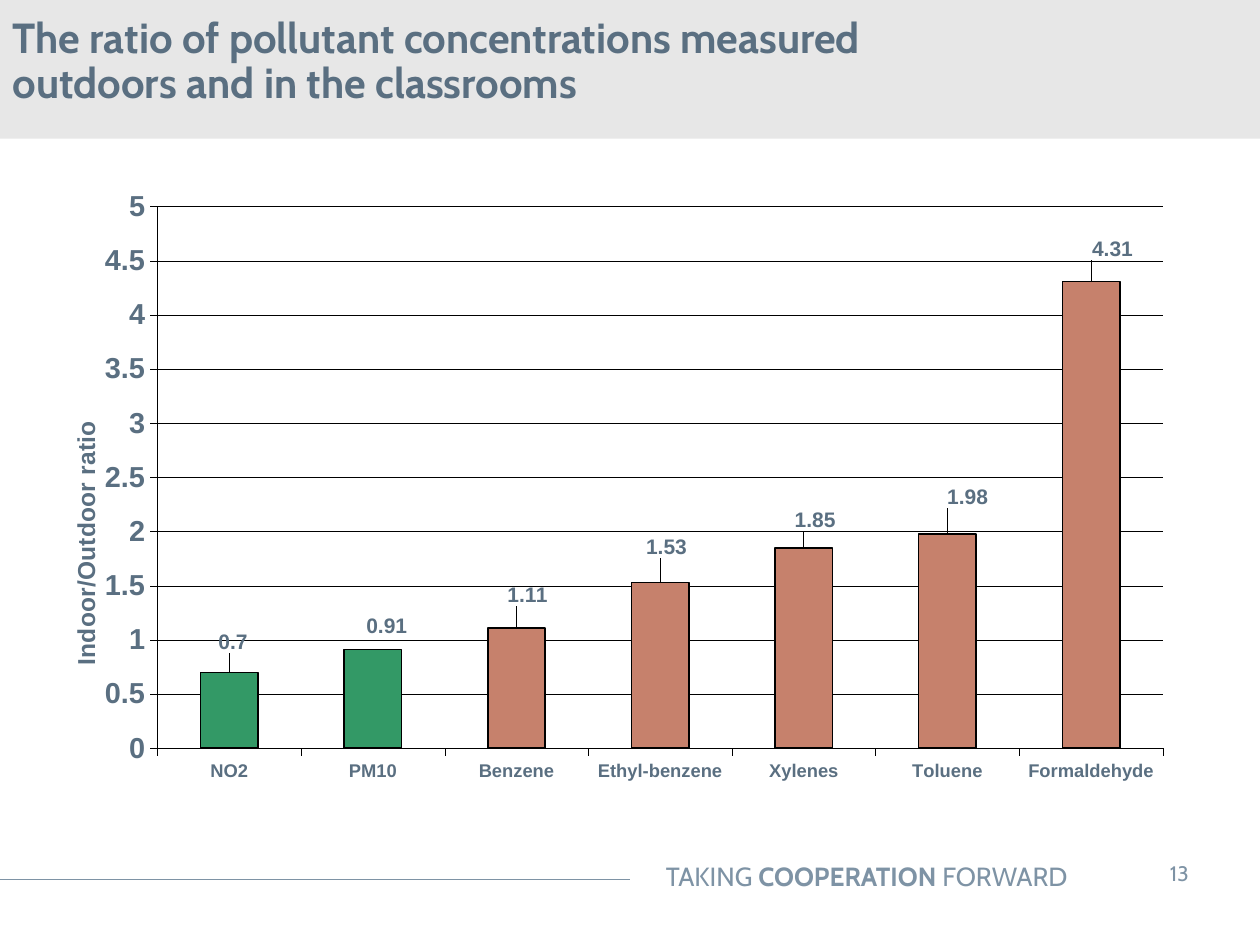
from lxml import etree
from pptx import Presentation
from pptx.chart.data import CategoryChartData
from pptx.dml.color import RGBColor
from pptx.enum import chart as ch, shapes, text
from pptx.oxml import ns
from pptx.util import Inches, Pt

HEX = {"ink": "5A6F81", "soft": "7E93A5", "band": "E7E7E7",
       "line": "000000", "clay": "C6816C", "green": "339966"}

# pollutant, ratio, shift of its label in inches (right, down)
DATA = [("NO2", 0.7, 0.03, -0.11), ("PM10", 0.91, 0.11, -0.06),
        ("Benzene", 1.11, 0.09, -0.13), ("Ethyl-benzene", 1.53, 0.05, -0.15),
        ("Xylenes", 1.85, 0.09, -0.09), ("Toluene", 1.98, 0.16, -0.16),
        ("Formaldehyde", 4.31, 0.17, -0.13)]
GREENS = 2


def rgb(name):
    return RGBColor.from_string(HEX[name])


def style(font, size, color, face, bold=None):
    font.size, font.name, font.bold = Pt(size), face, bold
    font.color.rgb = rgb(color)


def stroke(line, width, color="line"):
    line.width = Pt(width)
    line.color.rgb = rgb(color)


def layout(**vals):
    """Make a manual chart layout; text values are modes, numbers are fractions."""
    top = etree.Element(ns.qn("c:layout"))
    man = etree.SubElement(top, ns.qn("c:manualLayout"))
    for key, val in vals.items():
        etree.SubElement(man, ns.qn("c:" + key)).set("val", str(val))
    return top


def add_head(slide, x, y, w, h):
    band = slide.shapes.add_shape(shapes.MSO_SHAPE.RECTANGLE, x, y, w, h)
    band.shadow.inherit = False
    band.fill.solid()
    band.fill.fore_color.rgb = rgb("band")
    band.line.fill.background()

    title = slide.shapes.title
    title.left, title.top, title.width, title.height = x, y, Inches(7.6), Inches(0.99)
    tree = title.element.getparent()
    tree.append(title.element)  # bring the title in front of the band
    frame = title.text_frame
    frame.word_wrap = True
    frame.auto_size = text.MSO_AUTO_SIZE.NONE
    frame.vertical_anchor = text.MSO_ANCHOR.MIDDLE
    frame.margin_left = frame.margin_right = Inches(0.1)
    frame.margin_top = frame.margin_bottom = Inches(0.1)
    frame.text = ("The ratio of pollutant concentrations measured "
                  "outdoors and in the classrooms")
    para = frame.paragraphs[0]
    para.alignment = text.PP_ALIGN.LEFT
    para.line_spacing = 0.9
    style(para.font, 24, "ink", "Cabin", True)


def add_foot(slide, x, y, w):
    rule = slide.shapes.add_connector(shapes.MSO_CONNECTOR.STRAIGHT, x,
                                      y + Inches(0.25), x + w // 2, y + Inches(0.25))
    stroke(rule.line, 0.75, "soft")
    etree.SubElement(rule.element.spPr, ns.qn("a:effectLst"))

    box = slide.shapes.add_textbox(x + Inches(3.88), y + Inches(0.05),
                                   Inches(4.69), Inches(0.35))
    box.text_frame.word_wrap = True
    para = box.text_frame.paragraphs[0]
    para.alignment = text.PP_ALIGN.RIGHT
    style(para.font, 15, "soft", "Cabin")
    for part, bold in (("TAKING ", False), ("COOPERATION", True), (" FORWARD", False)):
        run = para.add_run()
        run.text, run.font.bold = part, bold

    page = slide.shapes.add_textbox(x + Inches(8.99), y, Inches(0.74), Inches(0.4))
    frame = page.text_frame
    frame.word_wrap = True
    frame.margin_left = frame.margin_right = Inches(0.2)
    frame.margin_top = frame.margin_bottom = Inches(0.1)
    frame.text = "13"
    para = frame.paragraphs[0]
    para.alignment = text.PP_ALIGN.CENTER
    style(para.font, 12, "soft", "Cabin")


def set_axes(chart, w, h):
    cat, val = chart.category_axis, chart.value_axis
    for axis, size in ((cat, 10.5), (val, 16.5)):
        axis.major_tick_mark = ch.XL_TICK_MARK.OUTSIDE
        axis.minor_tick_mark = ch.XL_TICK_MARK.NONE
        stroke(axis.format.line, 0.23)
        style(axis.tick_labels.font, size, "ink", "Arial", True)
    cat.tick_label_position = ch.XL_TICK_LABEL_POSITION.LOW
    val.minimum_scale, val.maximum_scale, val.major_unit = 0, 5, 0.5
    val.tick_labels.number_format = "General"
    val.tick_labels.number_format_is_linked = False
    stroke(val.major_gridlines.format.line, 0.23)

    name = val.axis_title
    name.text_frame.text = "Indoor/Outdoor ratio"
    style(name.text_frame.paragraphs[0].font, 14, "ink", "Arial", True)
    node = name._element
    for old in node.findall(ns.qn("c:layout")):
        node.remove(old)
    node.find(ns.qn("c:tx")).addnext(layout(
        xMode="edge", yMode="edge", x=Inches(0.21) / w, y=Inches(1.88) / h))


def set_bars(plot, w, h):
    plot.gap_width = 150
    plot.vary_by_categories = False
    bars = plot.series[0]
    bars.invert_if_negative = False
    bars.format.fill.solid()
    bars.format.fill.fore_color.rgb = rgb("clay")
    stroke(bars.format.line, 0.92)
    for i, (_, _, dx, dy) in enumerate(DATA):
        point = bars.points[i]
        if i < GREENS:
            point.format.fill.solid()
            point.format.fill.fore_color.rgb = rgb("green")
            stroke(point.format.line, 0.92)
        label = point.data_label
        style(label.font, 12, "ink", "Arial", True)
        label.position = ch.XL_LABEL_POSITION.OUTSIDE_END
        node = label._get_or_add_dLbl()
        node.find(ns.qn("c:idx")).addnext(layout(x=Inches(dx) / w, y=Inches(dy) / h))
    hide_leaders(bars.data_labels._element)


def hide_leaders(labels):
    """Turn off the lines that join moved labels to their bars."""
    for old in labels.findall(ns.qn("c:showLeaderLines")):
        labels.remove(old)
    uri = "http://schemas.microsoft.com/office/drawing/2012/chart"
    more = etree.SubElement(labels, ns.qn("c:extLst"))
    ext = etree.SubElement(more, ns.qn("c:ext"), nsmap={"c15": uri})
    ext.set("uri", "{CE6537A1-D6FC-4f65-9D91-7224C49458BB}")
    etree.SubElement(ext, "{%s}showLeaderLines" % uri).set("val", "0")


def add_ratios(slide, x, y, w, h):
    data = CategoryChartData()
    data.categories = [row[0] for row in DATA]
    data.add_series("Series 1", [row[1] for row in DATA])
    chart = slide.shapes.add_chart(ch.XL_CHART_TYPE.COLUMN_CLUSTERED,
                                   x, y, w, h, data).chart
    chart.has_legend = chart.has_title = False
    style(chart.font, 16.5, "ink", "Arial", True)
    set_axes(chart, w, h)
    set_bars(chart.plots[0], w, h)
    area = chart._chartSpace.chart.plotArea
    for old in area.findall(ns.qn("c:layout")):
        area.remove(old)
    area.insert(0, layout(layoutTarget="inner", xMode="edge", yMode="edge",
                          x=Inches(0.94) / w, y=Inches(0.21) / h,
                          w=Inches(7.98) / w, h=Inches(4.3) / h))


def main():
    deck = Presentation()
    deck.slide_width, deck.slide_height = Inches(10), Inches(7.5)
    slide = deck.slides.add_slide(deck.slide_layouts[5])
    add_head(slide, 0, 0, deck.slide_width, Inches(1.1))
    add_ratios(slide, Inches(0.31), Inches(1.43), Inches(9.02), Inches(4.91))
    add_foot(slide, 0, Inches(6.73), deck.slide_width)
    deck.save("out.pptx")


if __name__ == "__main__":
    main()
